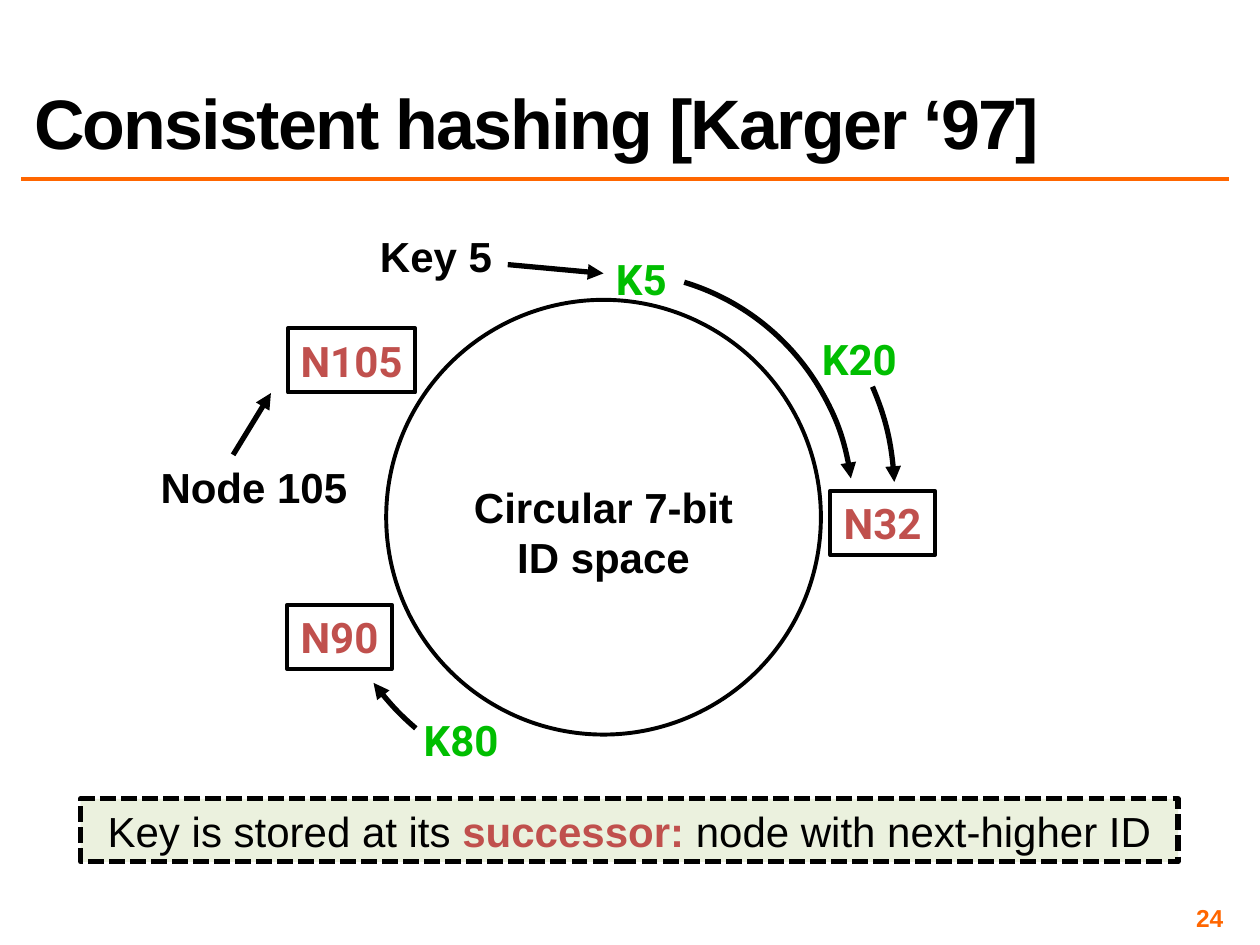
import pptx
import pptx.util
import pptx.oxml
import pptx.oxml.ns
import pptx.dml.color
import pptx.enum.dml
import pptx.enum.shapes
import pptx.enum.text

INK = {"black": "000000", "orange": "FF6600", "red": "C0504D",
       "green": "00BE00", "pale": "EBF1DE"}
WIDE, HIGH = 10, 7.5
COLS, ROWS = 100, 75

TITLE = "Consistent hashing [Karger ‘97]"
PAGE = "24"
RULE = [("Key is stored at its ", "black", False),
        ("successor:", "red", True),
        (" node with next-higher ID", "black", False)]

NODES = [("N105", 27.9, 28.6, 10.1), ("N32", 70.05, 41.5, 8.3),
         ("N90", 26.95, 50.55, 8.3)]
KEYS = [("K5", 50.9, 22.1, 6.4), ("K20", 68.2, 28.5, 8.4),
        ("K80", 36.6, 58.7, 8.4)]
NOTES = [(["Key 5"], 34.6, 20.3, 11.2), (["Node 105"], 20.15, 38.6, 17.2),
         (["Circular 7-bit", "ID space"], 47.9, 42.2, 23)]
RING = (47.9, 41.05, 17.25)
ARCS = [(48.85, 40.45, 18.85, 286.83, 352.45),
        (49.25, 39.25, 21.75, 336.83, 357.38),
        (48, 40.5, 22.9, 130.91, 143.26)]
ARROWS = [((40.3, 21), (47.9, 21.7)), ((18.5, 36.1), (21.5, 31.2))]

MARK = pptx.enum.shapes.MSO_SHAPE
ALIGN = pptx.enum.text.PP_ALIGN
FIT = pptx.enum.text.MSO_AUTO_SIZE
ANCHOR = pptx.enum.text.MSO_ANCHOR
Pt = pptx.util.Pt

deck = pptx.Presentation()
deck.slide_width = pptx.util.Inches(WIDE)
deck.slide_height = pptx.util.Inches(HIGH)
slide = deck.slides.add_slide(deck.slide_layouts[5])


def col(n):
    return round(deck.slide_width * n / COLS)


def row(n):
    return round(deck.slide_height * n / ROWS)


def box(x, y, w, h):
    return col(x - w / 2), row(y - h / 2), col(w), row(h)


def hue(name):
    return pptx.dml.color.RGBColor.from_string(INK[name])


def write(para, text, ink="black", size=24, face="Arial", bold=True):
    run = para.add_run()
    run.text = text
    run.font.name, run.font.size, run.font.bold = face, Pt(size), bold
    run.font.color.rgb = hue(ink)
    return run


def label(shape, lines, ink="black", face="Arial"):
    frame = shape.text_frame
    frame.word_wrap = False
    frame.auto_size = FIT.SHAPE_TO_FIT_TEXT
    for i, text in enumerate(lines):
        para = frame.add_paragraph() if i else frame.paragraphs[0]
        para.alignment = ALIGN.CENTER
        write(para, text, ink, face=face)


def draw(kind, place, width):
    shape = slide.shapes.add_shape(kind, *place)
    shape.shadow.inherit = False
    shape.fill.background()
    shape.line.color.rgb = hue("black")
    shape.line.width = Pt(width)
    return shape


def tip(shape):
    edge = shape.element.spPr.find(pptx.oxml.ns.qn("a:ln"))
    edge.append(pptx.oxml.parse_xml(
        '<a:tailEnd %s type="triangle"/>' % pptx.oxml.ns.nsdecls("a")))


def link(start, stop, ink, width):
    wire = slide.shapes.add_connector(
        pptx.enum.shapes.MSO_CONNECTOR.STRAIGHT,
        col(start[0]), row(start[1]), col(stop[0]), row(stop[1]))
    wire.line.color.rgb = hue(ink)
    wire.line.width = Pt(width)
    wire.element.spPr.append(pptx.oxml.parse_xml(
        "<a:effectLst %s/>" % pptx.oxml.ns.nsdecls("a")))
    return wire


link((1.7, 14.2), (97.5, 14.2), "orange", 2)

title = slide.shapes.title
title.left, title.top, title.width, title.height = (
    col(1.7), row(1.7), col(95.8), row(11.7))
title.text_frame.auto_size = FIT.NONE
title.text_frame.vertical_anchor = ANCHOR.BOTTOM
head = title.text_frame.paragraphs[0]
head.alignment, head.line_spacing = ALIGN.LEFT, 0.8
write(head, TITLE, size=40)
title.element.find(".//" + pptx.oxml.ns.qn("a:rPr")).set("spc", "-100")

foot = slide.shapes.add_textbox(col(74.2), row(71.7), col(23.3), row(2.3))
frame = foot.text_frame
frame.word_wrap, frame.vertical_anchor = True, ANCHOR.MIDDLE
frame.margin_left = frame.margin_right = col(0.4)
frame.margin_top = frame.margin_bottom = row(0.4)
frame.paragraphs[0].alignment = ALIGN.RIGHT
write(frame.paragraphs[0], PAGE, "orange", 14)

rule = draw(MARK.RECTANGLE, box(49.95, 65.9, 87.1, 5), 3)
rule.fill.solid()
rule.fill.fore_color.rgb = hue("pale")
rule.line.dash_style = pptx.enum.dml.MSO_LINE.SQUARE_DOT
rule.text_frame.word_wrap = True
rule.text_frame.auto_size = FIT.SHAPE_TO_FIT_TEXT
rule.text_frame.paragraphs[0].alignment = ALIGN.CENTER
for text, ink, bold in RULE:
    write(rule.text_frame.paragraphs[0], text, ink, bold=bold)

x, y, r = RING
draw(MARK.OVAL, box(x, y, 2 * r, 2 * r), 2.25)

for name, x, y, w in NODES:
    label(draw(MARK.RECTANGLE, box(x, y, w, 5.1), 2.25), [name], "red", "Roboto")
for name, x, y, w in KEYS:
    label(slide.shapes.add_textbox(*box(x, y, w, 5)), [name], "green", "Roboto")
for lines, x, y, w in NOTES:
    high = 1 + 4 * len(lines)
    label(slide.shapes.add_textbox(*box(x, y, w, high)), lines)

for x, y, r, start, stop in ARCS:
    arc = draw(MARK.ARC, box(x, y, 2 * r, 2 * r), 3)
    arc.adjustments[0], arc.adjustments[1] = start * 0.6, stop * 0.6
    tip(arc)
for start, stop in ARROWS:
    tip(link(start, stop, "black", 3))

deck.save("out.pptx")
